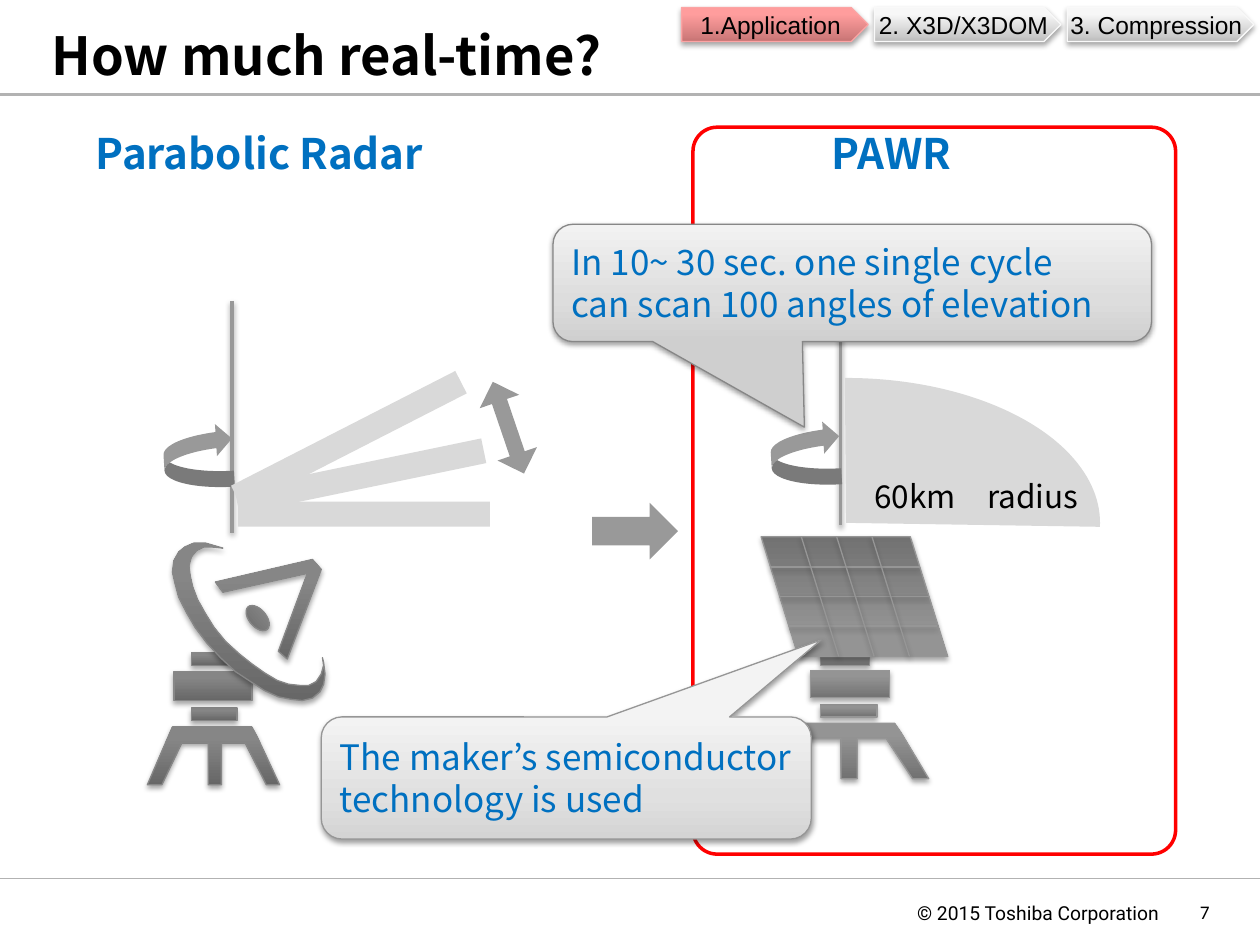
"""Build the slide comparing a parabolic radar with a phased array weather radar."""
from dataclasses import dataclass
from typing import Any, NamedTuple, Optional

from lxml import etree
from pptx import Presentation
from pptx import util as u
from pptx.dml import color
from pptx.enum import shapes, text
from pptx.oxml import ns

Pt = u.Pt
Shape = shapes.MSO_SHAPE
Align = text.PP_ALIGN
Anchor = text.MSO_ANCHOR


class Box(NamedTuple):
    x: float
    y: float
    w: float
    h: float


class Gradient(NamedTuple):
    stops: tuple[tuple[int, str], ...]


class Shadow(NamedTuple):
    alpha: int
    blur: float
    dist: float


class Style(NamedTuple):
    fill: Gradient | str | None = None
    line: Optional[str] = None
    width: float = 0.75
    shadow: Optional[Shadow] = None


class Font(NamedTuple):
    name: str
    size: float
    color: str = "000000"
    bold: bool = False


@dataclass(frozen=True)
class Stand:
    plates: tuple[Box, ...]
    legs: Box


SOFT = Shadow(35, 3.1, 1.8)
FIRM = Shadow(38, 3.1, 1.6)
SANS = "Noto Sans CJK JP"


@dataclass(frozen=True)
class Theme:
    rule: str = "B2B2B2"
    title: Font = Font(SANS, 30, bold=True)
    heading: Font = Font(SANS, 24, "0070C0", True)
    note: Font = Font(SANS, 20, "0070C0")
    label: Font = Font(SANS, 18)
    tab: Font = Font("Arial", 14)
    copyright: Font = Font("Roboto", 11)
    number: Font = Font("Calibri", 11)
    array: Style = Style(Gradient(((0, "727272"), (80, "949494"), (100, "959595"))), "969696", shadow=SOFT)
    dish: Style = Style(Gradient(((0, "676767"), (80, "868686"), (100, "868686"))), "878787", shadow=SOFT)
    active: Style = Style(Gradient(((0, "C87575"), (80, "FF9D9D"), (100, "FF9F9F"))), "FBA4A4", shadow=SOFT)
    idle: Style = Style(Gradient(((0, "BEBEBE"), (80, "F7F7F7"), (100, "F8F8F8"))), "F9F9F9", shadow=SOFT)
    scan_note: Style = Style(Gradient(((0, "CFCFCF"), (35, "DDDDDD"), (100, "F2F2F2"))), "878787", shadow=FIRM)
    chip_note: Style = Style(Gradient(((0, "D4D4D4"), (35, "E0E0E0"), (100, "F3F3F3"))), "969696", shadow=FIRM)
    mast: Style = Style(line="999999", width=2, shadow=FIRM)
    frame: Style = Style(line="FF0000", width=2)
    arrow: Style = Style("999999")
    beam: Style = Style("D9D9D9")


T = Theme()
LEGS = ((.79, 0), (.19, 0), (0, 1), (.11, 1), (.26, .28), (.46, .28), (.46, 1), (.56, 1),
        (.56, .28), (.74, .28), (.9, 1), (1, 1), (.83, .17))
HORN = ((164.2, 376.6), (183.6, 325.4), (178.6, 319.7), (123.1, 332.6), (127.4, 338.4),
        (175.7, 327.6), (159.1, 372.2))
DISH = ((184.3, 375.8), (185, 380.2), (183.6, 385.2), (180.7, 389.5), (176.4, 391.7), (171.4, 391.7),
        (164.9, 391), (158.4, 388.8), (151.2, 384.5), (144, 379.4), (136.8, 373.7), (128.9, 366.5),
        (122.4, 358.6), (117.4, 350.6), (113, 342.7), (110.2, 335.5), (108.7, 329), (108, 323.3),
        (109.4, 318.2), (112.3, 314.6), (116.6, 312.5), (121, 312.5), (127.4, 313.2), (122.4, 311.8),
        (117.4, 310.3), (110.9, 310.3), (105.8, 312.5), (102.2, 315.4), (99.4, 320.4), (98.6, 326.9),
        (100.1, 333.4), (102.2, 341.3), (106.6, 349.9), (111.6, 358.6), (118.1, 367.2), (126, 375.8),
        (134.6, 383.8), (143.3, 389.5), (151.2, 394.6), (159.1, 398.2), (166.3, 399.6), (172.8, 400.3),
        (178.6, 398.9), (182.9, 395.3), (185, 391), (185.8, 385.2), (185, 378.7))
RADAR_STAND = Stand((Box(109.4, 404.6, 26, 7.2), Box(109.4, 373, 23, 7.2), Box(99.4, 383.8, 44.6, 16.6)),
                    Box(84.2, 415.4, 75.6, 33.1))
ARRAY_STAND = Stand((Box(468.7, 402.5, 32.4, 7.2), Box(468.7, 373, 28, 7.2), Box(463, 383, 45.4, 15.8)),
                    Box(437.8, 413.3, 92.9, 31.7))


def rgb(value: str) -> color.RGBColor:
    return color.RGBColor.from_string(value)


def child(parent: Any, tag: str, **attrs: Any) -> Any:
    return etree.SubElement(parent, ns.qn(tag), {k: str(v) for k, v in attrs.items()})


def add_shadow(effects: Any, shadow: Optional[Shadow]) -> None:
    if shadow:
        outer = child(effects, "a:outerShdw", blurRad=Pt(shadow.blur), dist=Pt(shadow.dist),
                      dir=5400000, rotWithShape=0)
        child(child(outer, "a:srgbClr", val="000000"), "a:alpha", val=shadow.alpha * 1000)


def paint(sp: Any, style: Style) -> Any:
    if isinstance(style.fill, Gradient):
        sp.fill.gradient()
        sp.fill.gradient_angle = 90
        stops = sp._element.spPr.find(".//" + ns.qn("a:gsLst"))
        for stop in list(stops):
            stops.remove(stop)
        for pos, value in style.fill.stops:
            child(child(stops, "a:gs", pos=pos * 1000), "a:srgbClr", val=value)
    elif style.fill:
        sp.fill.solid()
        sp.fill.fore_color.rgb = rgb(style.fill)
    else:
        sp.fill.background()
    if style.line:
        sp.line.color.rgb = rgb(style.line)
        sp.line.width = Pt(style.width)
    else:
        sp.line.fill.background()
    sp.shadow.inherit = False
    add_shadow(sp._element.spPr.find(ns.qn("a:effectLst")), style.shadow)
    return sp


def add_preset(tree: Any, kind: Any, box: Box, style: Style, rot: float = 0, adj: tuple[float, ...] = ()) -> Any:
    sp = tree.add_shape(kind, *map(Pt, box))
    sp.rotation = rot
    for i, value in enumerate(adj):
        sp.adjustments[i] = value
    return paint(sp, style)


def add_outline(tree: Any, points: Any, style: Style) -> None:
    start, *rest = [(Pt(x), Pt(y)) for x, y in points]
    builder = tree.build_freeform(*start)
    builder.add_line_segments(rest, close=True)
    paint(builder.convert_to_shape(), style)


def add_line(tree: Any, x1: float, y1: float, x2: float, y2: float, style: Style) -> None:
    cx = tree.add_connector(shapes.MSO_CONNECTOR.STRAIGHT, Pt(x1), Pt(y1), Pt(x2), Pt(y2))
    cx.line.color.rgb = rgb(style.line)
    cx.line.width = Pt(style.width)
    add_shadow(child(cx._element.spPr, "a:effectLst"), style.shadow)


def write(sp: Any, lines: str, font: Font, align: Any = Align.LEFT, anchor: Any = Anchor.MIDDLE,
          inset: tuple[float, float] = (7.2, 3.6), wrap: bool = True) -> None:
    tf = sp.text_frame
    tf.word_wrap, tf.vertical_anchor = wrap, anchor
    tf.margin_left = tf.margin_right = Pt(inset[0])
    tf.margin_top = tf.margin_bottom = Pt(inset[1])
    p = tf.paragraphs[0]
    p.alignment = align
    for i, line in enumerate(lines.split("\n")):
        if i:
            p.add_line_break()
        r = p.add_run()
        r.text = line
        r.font.name, r.font.size, r.font.bold = font.name, Pt(font.size), font.bold
        r.font.color.rgb = rgb(font.color)


def add_label(tree: Any, box: Box, lines: str, font: Font, **options: Any) -> None:
    write(tree.add_textbox(*map(Pt, box)), lines, font, **{"inset": (0, 0), **options})


def add_stand(tree: Any, stand: Stand, style: Style) -> None:
    for plate in stand.plates:
        add_preset(tree, Shape.RECTANGLE, plate, style)
    x, y, w, h = stand.legs
    add_outline(tree, [(x + w * fx, y + h * fy) for fx, fy in LEGS], style)


def add_array(tree: Any) -> None:
    add_stand(tree, ARRAY_STAND, T.array)
    panel = add_preset(tree, Shape.FLOWCHART_DATA, Box(434.9, 306.7, 106.6, 68.4), T.array, 180)
    panel._element.spPr.xfrm.set("flipH", "1")
    for i in range(3):
        x, y = 440.6 + 5 * i, 324 + 16.9 * i
        add_line(tree, x, y, x + 85, y, T.array)
    for i in range(3):
        x = 457.9 + 20.2 * i
        add_line(tree, x, 306.7, x + 21.4, 375.1, T.array)


def add_dish(tree: Any) -> None:
    add_outline(tree, HORN, T.dish)
    add_stand(tree, RADAR_STAND, T.dish)
    add_preset(tree, Shape.OVAL, Box(138.8, 348.3, 16.9, 9.8), T.dish, 50)
    add_outline(tree, DISH, T.dish)


def main() -> None:
    prs = Presentation()
    prs.slide_width, prs.slide_height = Pt(720), Pt(540)
    tree = prs.slides.add_slide(prs.slide_layouts[6]).shapes
    add_line(tree, 0, 502, 720, 502, Style(line=T.rule, width=1))
    add_label(tree, Box(524, 514.8, 140.4, 13.7), "© 2015 Toshiba Corporation", T.copyright, wrap=False)
    add_line(tree, 0, 54, 720, 54, Style(line=T.rule, width=1.5))
    add_label(tree, Box(645.8, 509, 45.4, 23.8), "7", T.number, align=Align.RIGHT)
    add_array(tree.add_group_shape().shapes)
    add_dish(tree.add_group_shape().shapes)
    for x, top, bottom in ((132.5, 172, 304.6), (480.2, 168.5, 300.2)):
        add_line(tree, x, top, x, bottom, T.mast)
    for x, y in ((95, 241.2), (442, 239.8)):
        add_preset(tree, Shape.CURVED_DOWN_ARROW, Box(x, y, 36.7, 39.6), T.arrow, 266.5)
    for x, y, rot in ((136, 286.6, 0), (134, 265, 348.3), (127.4, 244, 332.9)):
        add_preset(tree, Shape.RECTANGLE, Box(x, y, 144, 14.4), T.beam, rot)
    add_preset(tree, Shape.UP_DOWN_ARROW, Box(278.6, 216.7, 23.8, 55.4), T.arrow, 341.2, (.42, .38))
    add_preset(tree, Shape.ROUNDED_RECTANGLE, Box(396, 72.7, 275.8, 415.4), T.frame, adj=(.05,))
    for i, name in enumerate(("1.Application", "2. X3D/X3DOM", "3. Compression")):
        tab = add_preset(tree, Shape.PENTAGON, Box(389.5 + 110.2 * i, 4.3, 106.6, 19.4), T.idle if i else T.active)
        write(tab, name, T.tab, Align.CENTER, wrap=False)
    add_preset(tree, Shape.RIGHT_ARROW, Box(338.4, 287.3, 49, 32.4), T.arrow)
    for box, tip, style, lines in (
            (Box(316, 128.2, 342, 67), (-.08, 1.23), T.scan_note,
             "In 10~ 30 sec. one single cycle\ncan scan 100 angles of elevation"),
            (Box(183.6, 409.7, 280, 69.8), (.52, -1.13), T.chip_note,
             "The maker’s semiconductor\ntechnology is used")):
        write(add_preset(tree, Shape.ROUNDED_RECTANGULAR_CALLOUT, box, style, adj=(*tip, .17)), lines, T.note)
    add_preset(tree, Shape.PIE, Box(338.4, 216, 290.2, 165.6), T.beam, adj=(161.71, .54))
    add_label(tree, Box(475.2, 72.7, 195, 78.5), "PAWR", T.heading, anchor=Anchor.TOP)
    add_label(tree, Box(54.7, 72.7, 228, 78.5), "Parabolic Radar", T.heading, anchor=Anchor.TOP)
    add_label(tree, Box(29.5, 0, 658.8, 49), "How much real-time?", T.title, anchor=Anchor.BOTTOM)
    add_label(tree, Box(492.5, 269.3, 143.3, 28.8), "60km　radius", T.label, anchor=Anchor.TOP, inset=(7.2, 3.6))
    prs.save("out.pptx")


if __name__ == "__main__":
    main()
